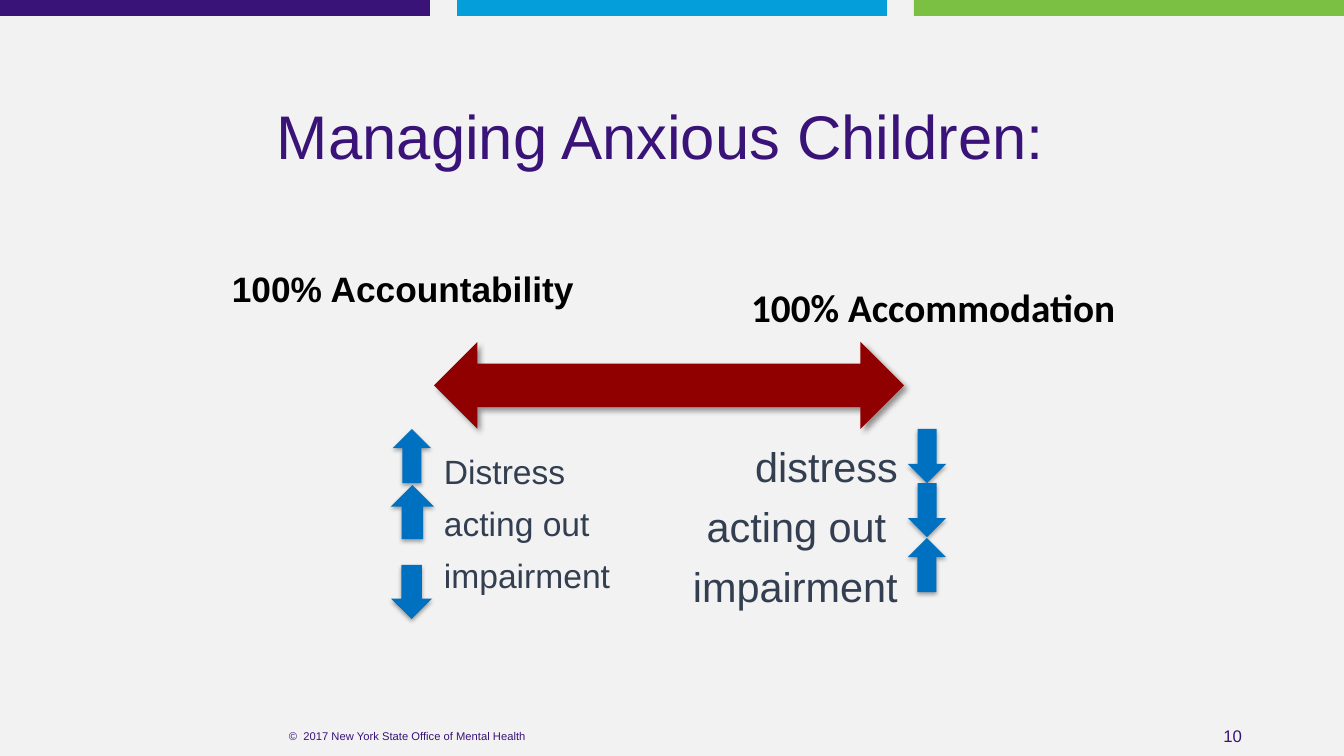
import pptx
import pptx.util
import pptx.dml.color
import pptx.enum.shapes
import pptx.enum.text
import pptx.oxml
import pptx.oxml.ns

KIND = pptx.enum.shapes.MSO_SHAPE
ALIGN = pptx.enum.text.PP_ALIGN
ANCHOR = pptx.enum.text.MSO_ANCHOR
WIDE, HIGH = 1344, 756
PURPLE, SLATE, BLUE = "391378", "333F50", "0070C0"


def px(num):
    """Turn px into EMU."""
    return pptx.util.Emu(round(num * 914400 / 100.8))


def color(code):
    """Turn a hex string into a color."""
    return pptx.dml.color.RGBColor.from_string(code)


def shape(slide, kind, box, fill):
    """Add a filled shape without a line."""
    item = slide.shapes.add_shape(kind, *map(px, box))
    item.shadow.inherit = False
    item.fill.solid()
    item.fill.fore_color.rgb = color(fill)
    item.line.fill.background()
    return item


def shade(item, alpha, blur, dist, angle):
    """Give a shape a black outer shadow."""
    space = pptx.oxml.ns.nsdecls("a")
    glow = pptx.oxml.parse_xml(
        f'<a:outerShdw {space} blurRad="{pptx.util.Pt(blur)}" '
        f'dist="{pptx.util.Pt(dist)}" dir="{angle * 60000}" rotWithShape="0">'
        f'<a:srgbClr val="000000"><a:alpha val="{alpha * 1000}"/></a:srgbClr>'
        '</a:outerShdw>')
    item.element.spPr.find(pptx.oxml.ns.qn("a:effectLst")).append(glow)


def write(slide, box, text, size, ink, align=ALIGN.LEFT, anchor=ANCHOR.MIDDLE,
          face="Arial", bold=False, line=1.0, gap=0):
    """Add a text box with one paragraph per line of text."""
    frame = slide.shapes.add_textbox(*map(px, box)).text_frame
    frame.word_wrap = True
    frame.vertical_anchor = anchor
    frame.text = text
    for rank, para in enumerate(frame.paragraphs):
        para.alignment = align
        para.line_spacing = line
        para.space_before = pptx.util.Pt(gap if rank else 0)
        for run in para.runs:
            run.font.name = face
            run.font.size = pptx.util.Pt(size)
            run.font.bold = bold
            run.font.color.rgb = color(ink)


def header(slide, box):
    """Draw the three bars at the top."""
    left, top, wide, high = box
    bar, gap = 430, 27
    for rank, fill in enumerate((PURPLE, "049FDA", "7BBF43")):
        shape(slide, KIND.RECTANGLE, (left + rank * (bar + gap), top, bar, high), fill)


def footer(slide, box):
    """Write the copyright line and the page number."""
    left, top, wide, high = box
    write(slide, (left + 182, top, 451, high),
          "©  2017 New York State Office of Mental Health", 8, PURPLE, ALIGN.CENTER)
    write(slide, (left + 950, top, 302, high), "10", 12, PURPLE, ALIGN.RIGHT)


def scale(slide, box):
    """Draw the double arrow with a heading over each end."""
    left, top, wide, high = box
    write(slide, (left, top, 497, 50), "100% Accountability", 25.2, "000000", bold=True)
    write(slide, (left + wide - 440, top + 19, 440, 50), "100% Accommodation", 28,
          "000000", ALIGN.RIGHT, face="Calibri", bold=True)
    arrow = shape(slide, KIND.LEFT_RIGHT_ARROW,
                  (left + 212, top + high - 87, 470, 87), "900000")
    shade(arrow, 40, 4, 3, 45)


def effects(slide, box, text, arrows, **style):
    """Write a list of effects and draw its arrows, given as x, y, width, turn."""
    left, top, wide, high = box
    write(slide, box, text, ink=SLATE, anchor=ANCHOR.TOP, **style)
    for x, y, span, turn in arrows:
        arrow = shape(slide, KIND.UP_ARROW, (left + x, top + y, span, 54), BLUE)
        arrow.rotation = turn
        shade(arrow, 35, 3.1, 1.8, 90)


def main():
    """Build the slide and save it."""
    deck = pptx.Presentation()
    deck.slide_width, deck.slide_height = px(WIDE), px(HIGH)
    slide = deck.slides.add_slide(deck.slide_layouts[6])
    slide.background.fill.solid()
    slide.background.fill.fore_color.rgb = color("F2F2F2")
    header(slide, (0, 0, WIDE, 16))
    footer(slide, (0, 716, WIDE, 40))
    write(slide, (218, 93, 903, 80), "Managing Anxious Children: ", 44, PURPLE,
          ALIGN.CENTER, ANCHOR.TOP)
    scale(slide, (222, 263, 903, 166))
    effects(slide, (434, 451, 235, 181), "Distress\nacting out\nimpairment",
            ((-41, -22, 38, 0), (-43, 34, 43, 0), (-43, 114, 41, 180)),
            size=24, line=0.9, gap=11)
    effects(slide, (669, 436, 239, 209), "distress\nacting out \nimpairment",
            ((239, -7, 38, 180), (239, 47, 38, 180), (239, 102, 38, 0)),
            size=29.6, align=ALIGN.RIGHT, gap=7.5)
    deck.save("out.pptx")


if __name__ == "__main__":
    main()
